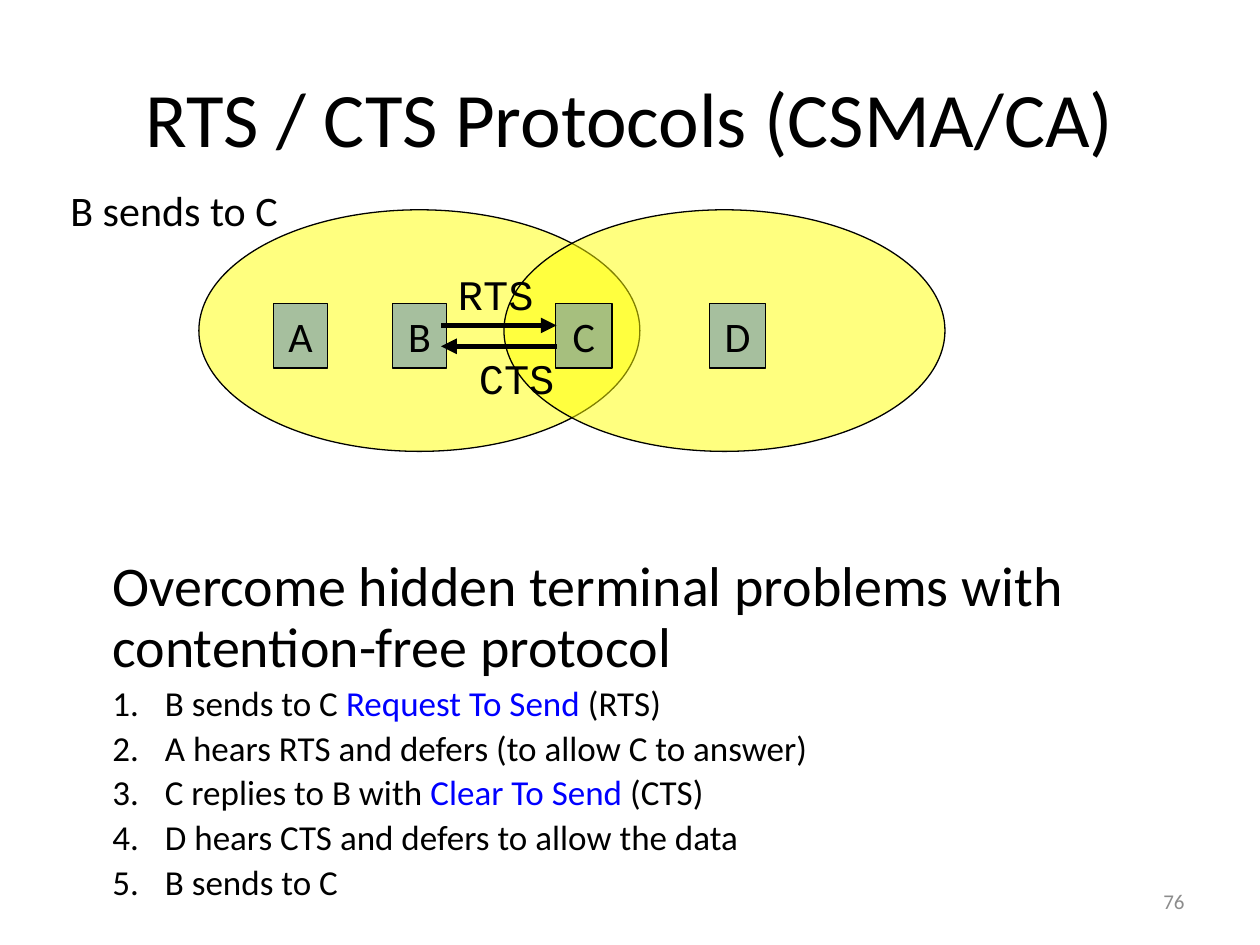
"""Build a slide that explains the RTS / CTS exchange between wireless stations."""
from dataclasses import dataclass

from lxml import etree
from pptx import Presentation
from pptx.dml.color import RGBColor
from pptx.enum.shapes import MSO_CONNECTOR, MSO_SHAPE
from pptx.enum.text import MSO_ANCHOR, MSO_AUTO_SIZE, PP_ALIGN
from pptx.oxml.ns import qn
from pptx.util import Cm, Pt

OVAL, RECTANGLE = MSO_SHAPE.OVAL, MSO_SHAPE.RECTANGLE
STRAIGHT = MSO_CONNECTOR.STRAIGHT
LEFT, CENTER, RIGHT = PP_ALIGN.LEFT, PP_ALIGN.CENTER, PP_ALIGN.RIGHT
TOP, MIDDLE = MSO_ANCHOR.TOP, MSO_ANCHOR.MIDDLE
FIT_SHAPE, FIXED = MSO_AUTO_SIZE.SHAPE_TO_FIT_TEXT, MSO_AUTO_SIZE.NONE


@dataclass(frozen=True)
class Theme:
    ink: str = "000000"
    term: str = "0000FF"
    radio_range: str = "FFFF00"
    station: str = "4F81BD"
    page: str = "8C8C8C"
    font: str = "Calibri"
    frame_font: str = "Courier New"
    title_size: int = 44
    lead_size: int = 32
    label_size: int = 24
    step_size: int = 20
    page_size: int = 12
    opacity: int = 50
    outline: float = 0.75
    arrow: float = 3


THEME = Theme()
STATIONS = (("A", 5.51, 1.1), ("B", 7.91, 1.1), ("C", 11.2, 1.14), ("D", 14.3, 1.14))
RANGE_LEFTS = (4.01, 10.16)
LEAD = "Overcome hidden terminal problems with contention-free protocol"
STEPS = (
    ("B sends to C ", "Request To Send", " (RTS)"),
    ("A hears RTS and defers (to allow C to answer)",),
    ("C replies to B with ", "Clear To Send", " (CTS)"),
    ("D hears CTS and defers to allow the data",),
    ("B sends to C",),
)


def write(paragraph, text, size=THEME.label_size, color=THEME.ink, font=THEME.font, align=LEFT):
    """Append a formatted run to a paragraph."""
    run = paragraph.add_run()
    run.text = text
    run.font.size = Pt(size)
    run.font.name = font
    run.font.color.rgb = RGBColor.from_string(color)
    paragraph.alignment = align


def place(element, left, top, width, height):
    """Set the position and size of an element in centimetres."""
    element.left, element.top = Cm(left), Cm(top)
    element.width, element.height = Cm(width), Cm(height)


def add_outlined(slide, geometry, box, color):
    """Add a translucent shape with a thin outline."""
    shape = slide.shapes.add_shape(geometry, *map(Cm, box))
    shape.shadow.inherit = False
    shape.fill.solid()
    shape.fill.fore_color.rgb = RGBColor.from_string(color)
    tint = shape.fill._xPr.find(qn("a:solidFill"))[0]
    etree.SubElement(tint, qn("a:alpha"), val=str(THEME.opacity * 1000))
    shape.line.color.rgb = RGBColor.from_string(THEME.ink)
    shape.line.width = Pt(THEME.outline)
    return shape


def add_station(slide, name, left, width):
    """Add a labelled station box."""
    station = add_outlined(slide, RECTANGLE, (left, 6.12, width, 1.3), THEME.station)
    frame = station.text_frame
    frame.word_wrap = False
    frame.auto_size = FIT_SHAPE
    frame.vertical_anchor = MIDDLE
    write(frame.paragraphs[0], name, align=CENTER)


def add_label(shapes, text, box, wrap=False, anchor=TOP, **style):
    """Add a text box with one line of text."""
    frame = shapes.add_textbox(*map(Cm, box)).text_frame
    frame.word_wrap = wrap
    frame.auto_size = FIXED if wrap else FIT_SHAPE
    frame.vertical_anchor = anchor
    write(frame.paragraphs[0], text, **style)


def add_message(slide, name, start, end, level, label_left, label_top):
    """Add a grouped arrow and label for one control frame."""
    message = slide.shapes.add_group_shape().shapes
    arrow = message.add_connector(STRAIGHT, Cm(start), Cm(level), Cm(end), Cm(level))
    arrow.line.color.rgb = RGBColor.from_string(THEME.ink)
    arrow.line.width = Pt(THEME.arrow)
    etree.SubElement(arrow.line._get_or_add_ln(), qn("a:tailEnd"), type="triangle")
    etree.SubElement(arrow._element.spPr, qn("a:effectLst"))
    add_label(message, name, (label_left, label_top, 2.21, 1.27),
              font=THEME.frame_font, align=CENTER)


def set_list_style(paragraph, margin, hanging, bullet, **bullet_values):
    """Set the indents, line spacing and bullet of a list paragraph."""
    paragraph.line_spacing = 0.9
    properties = paragraph._p.get_or_add_pPr()
    properties.set("marL", str(Cm(margin)))
    properties.set("indent", str(-Cm(hanging)))
    etree.SubElement(properties, qn(bullet), **bullet_values)


def fill_title(title):
    """Place and fill the title."""
    place(title, 1.27, 0.76, 22.86, 3.18)
    title.text_frame.vertical_anchor = MIDDLE
    write(title.text_frame.paragraphs[0], "RTS / CTS Protocols (CSMA/CA)",
          size=THEME.title_size, align=CENTER)


def fill_steps(body):
    """Place the body below the diagram and fill in the numbered steps."""
    place(body, 0.74, 6.73, 23.93, 12.32)
    frame = body.text_frame
    frame.auto_size = FIXED
    frame.margin_top = Cm(4.52)
    lead = frame.paragraphs[0]
    lead.space_before = Pt(0)
    set_list_style(lead, 1.27, 0, "a:buNone")
    write(lead, LEAD, size=THEME.lead_size)
    for parts in STEPS:
        step = frame.add_paragraph()
        step.level = 1
        step.space_before = Pt(THEME.step_size * 0.2)
        set_list_style(step, 2.33, 1.06, "a:buAutoNum", type="arabicPeriod")
        for position, part in enumerate(parts):
            color = THEME.term if position == 1 else THEME.ink
            write(step, part, size=THEME.step_size, color=color)


def main():
    """Build and save the slide."""
    deck = Presentation()
    deck.slide_width, deck.slide_height = Cm(25.4), Cm(19.05)
    slide = deck.slides.add_slide(deck.slide_layouts[1])
    fill_title(slide.shapes.title)
    fill_steps(slide.placeholders[1])
    for left in RANGE_LEFTS:
        add_outlined(slide, OVAL, (left, 4.23, 8.89, 4.87), THEME.radio_range)
    for station in STATIONS:
        add_station(slide, *station)
    add_message(slide, "RTS", 8.89, 11.22, 6.56, 8.89, 5.29)
    add_message(slide, "CTS", 11.22, 8.89, 6.98, 9.31, 6.98)
    add_label(slide.shapes, "B sends to C", (1.17, 3.6, 5.69, 1.27))
    add_label(slide.shapes, "76", (18.21, 17.65, 5.92, 1.02), wrap=True, anchor=MIDDLE,
              size=THEME.page_size, color=THEME.page, align=RIGHT)
    deck.save("out.pptx")


if __name__ == "__main__":
    main()
